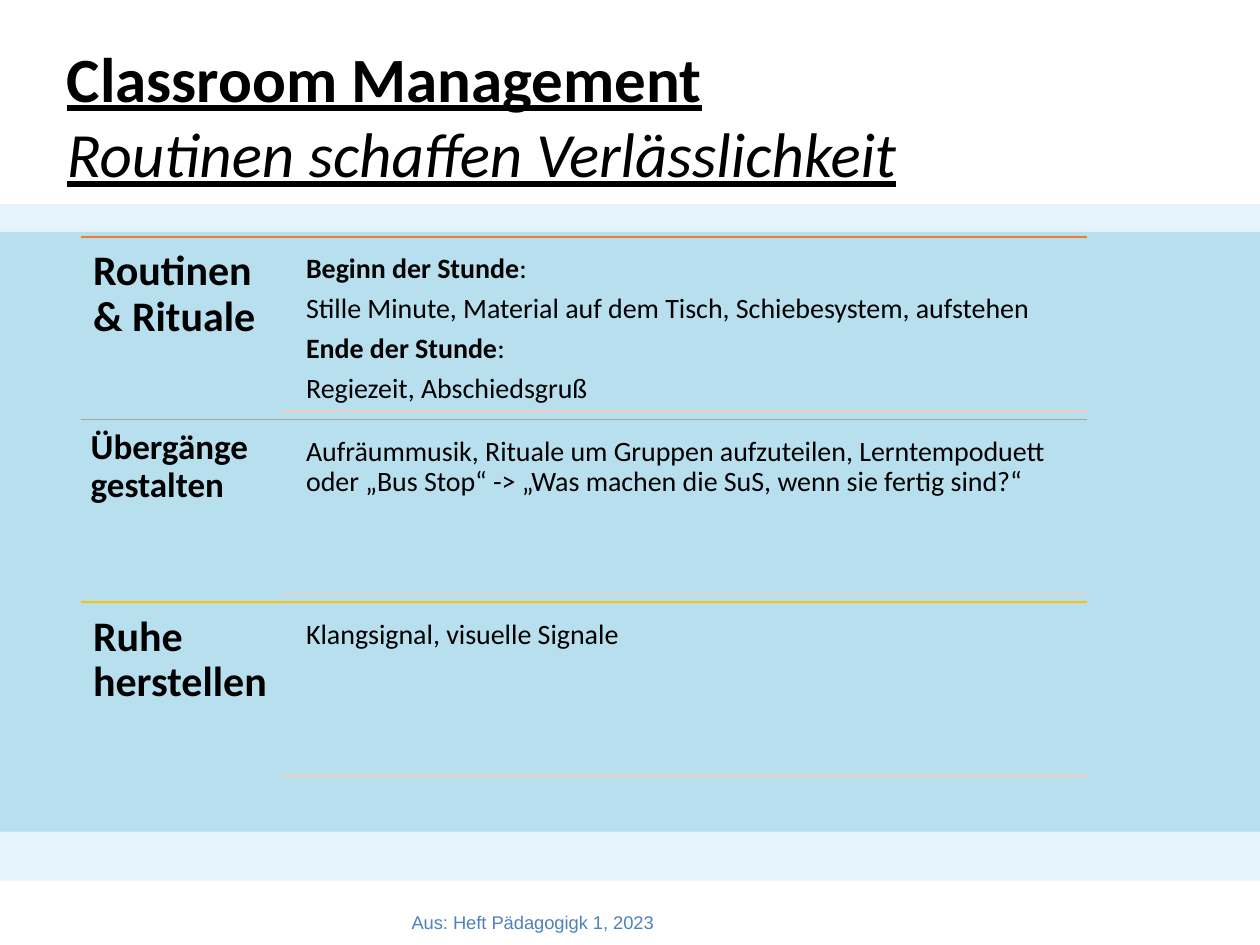
from lxml.etree import SubElement
from pptx import Presentation
from pptx.dml.color import RGBColor
from pptx.enum.shapes import MSO_CONNECTOR, MSO_SHAPE
from pptx.enum.text import MSO_ANCHOR, MSO_AUTO_SIZE, PP_ALIGN
from pptx.oxml.ns import qn
from pptx.util import Inches, Pt

COLORS = {
    "black": "000000",
    "band": "CCE9F2",
    "veil": "008CCF",
    "source": "4F81BD",
    "divider": "F6CCBE",
    "orange": "ED7D31",
    "grey": "A5A5A5",
    "yellow": "FFC000",
}
WIDTH, HEIGHT = 10, 7.5
LEFT, RIGHT = 0.64, 8.63
TOP, ROW_HEIGHT = 1.88, 1.45
LABEL_WIDTH = 1.6
DETAIL_LEFT, DETAIL_INSET = 2.36, 0.07

# Rule colour, label, label size, label inset, detail paragraphs of (text, bold) spans
ROWS = [
    ("orange", "Routinen & Rituale", 24, 0.1, [
        [("Beginn der Stunde", True), (":", False)],
        [("Stille Minute, Material auf dem Tisch, Schiebesystem, aufstehen", False)],
        [("Ende der Stunde", True), (":", False)],
        [("Regiezeit, Abschiedsgruß", False)],
    ]),
    ("grey", "Übergänge gestalten", 20, 0.08, [
        [("Aufräummusik, Rituale um Gruppen aufzuteilen, Lerntempoduett oder "
          "„Bus Stop“ -> „Was machen die SuS, wenn sie fertig sind?“", False)],
    ]),
    ("yellow", "Ruhe herstellen", 24, 0.1, [
        [("Klangsignal, visuelle Signale", False)],
    ]),
]


def rgb(name):
    return RGBColor.from_string(COLORS[name])


def add_band(slide, top, height, color, alpha=None):
    """Full-width rectangle; alpha is the opacity in percent."""
    band = slide.shapes.add_shape(
        MSO_SHAPE.RECTANGLE, 0, Inches(top), Inches(WIDTH), Inches(height))
    band.shadow.inherit = False
    band.fill.solid()
    band.fill.fore_color.rgb = rgb(color)
    band.line.fill.background()
    if alpha is not None:
        fill_color = band.fill._xPr.find(qn("a:solidFill"))[0]
        SubElement(fill_color, qn("a:alpha"), val=str(alpha * 1000))


def add_rule(slide, left, top, color):
    rule = slide.shapes.add_connector(
        MSO_CONNECTOR.STRAIGHT, Inches(left), Inches(top), Inches(RIGHT), Inches(top))
    rule.line.color.rgb = rgb(color)
    rule.line.width = Pt(1)
    SubElement(rule._element.spPr, qn("a:effectLst"))


def write_spans(para, spans, size, font="Calibri", color="black", underline=None):
    """Fill a paragraph with (text, bold) or (text, bold, italic) spans."""
    for text, bold, *italic in spans:
        span = para.add_run()
        span.text = text
        span.font.name = font
        span.font.size = Pt(size)
        span.font.bold = bold
        span.font.italic = bool(italic and italic[0])
        span.font.underline = underline
        span.font.color.rgb = rgb(color)


def set_frame(frame, inset=None, anchor=MSO_ANCHOR.TOP):
    frame.word_wrap = True
    frame.auto_size = MSO_AUTO_SIZE.NONE
    frame.vertical_anchor = anchor
    if inset is not None:
        frame.margin_left = frame.margin_right = Inches(inset)
        frame.margin_top = frame.margin_bottom = Inches(inset)


def add_text(slide, left, top, width, height, paragraphs, size, inset=None,
             anchor=MSO_ANCHOR.TOP, align=PP_ALIGN.LEFT, spacing=0.9, **style):
    box = slide.shapes.add_textbox(
        Inches(left), Inches(top), Inches(width), Inches(height))
    frame = box.text_frame
    set_frame(frame, inset, anchor)
    for index, spans in enumerate(paragraphs):
        para = frame.paragraphs[0] if index == 0 else frame.add_paragraph()
        para.alignment = align
        para.line_spacing = spacing
        para.space_after = Pt(0.35 * size)
        write_spans(para, spans, size, **style)


def set_title(slide, lines):
    title = slide.shapes.title
    title.left, title.top = Inches(0.43), Inches(0.26)
    title.width, title.height = Inches(7.01), Inches(1.31)
    frame = title.text_frame
    set_frame(frame)
    for index, spans in enumerate(lines):
        para = frame.paragraphs[0] if index == 0 else frame.add_paragraph()
        para.alignment = PP_ALIGN.LEFT
        write_spans(para, spans, 36, underline=True)


def add_row(slide, top, color, label, label_size, label_inset, details):
    add_rule(slide, LEFT, top, color)
    add_text(slide, LEFT, top, LABEL_WIDTH, ROW_HEIGHT, [[(label, True)]],
             label_size, inset=label_inset)
    add_text(slide, DETAIL_LEFT, top + DETAIL_INSET, RIGHT - DETAIL_LEFT,
             ROW_HEIGHT - 2 * DETAIL_INSET, details, 16, inset=DETAIL_INSET)
    add_rule(slide, LEFT + LABEL_WIDTH, top + ROW_HEIGHT - DETAIL_INSET, "divider")


def main():
    deck = Presentation()
    deck.slide_width, deck.slide_height = Inches(WIDTH), Inches(HEIGHT)
    slide = deck.slides.add_slide(deck.slide_layouts[5])
    add_band(slide, 1.84, 4.76, "band")
    add_band(slide, 1.62, 5.37, "veil", alpha=10)
    set_title(slide, [[("Classroom Management", True)],
                      [("Routinen schaffen Verlässlichkeit", False, True)]])
    for index, row in enumerate(ROWS):
        add_row(slide, TOP + index * ROW_HEIGHT, *row)
    add_text(slide, 0.2, 7.06, 8.06, 0.52, [[("Aus: Heft Pädagogigk 1, 2023", False)]],
             10.5, anchor=MSO_ANCHOR.MIDDLE, align=PP_ALIGN.CENTER, spacing=1,
             font="Arial", color="source")
    deck.save("out.pptx")


if __name__ == "__main__":
    main()
